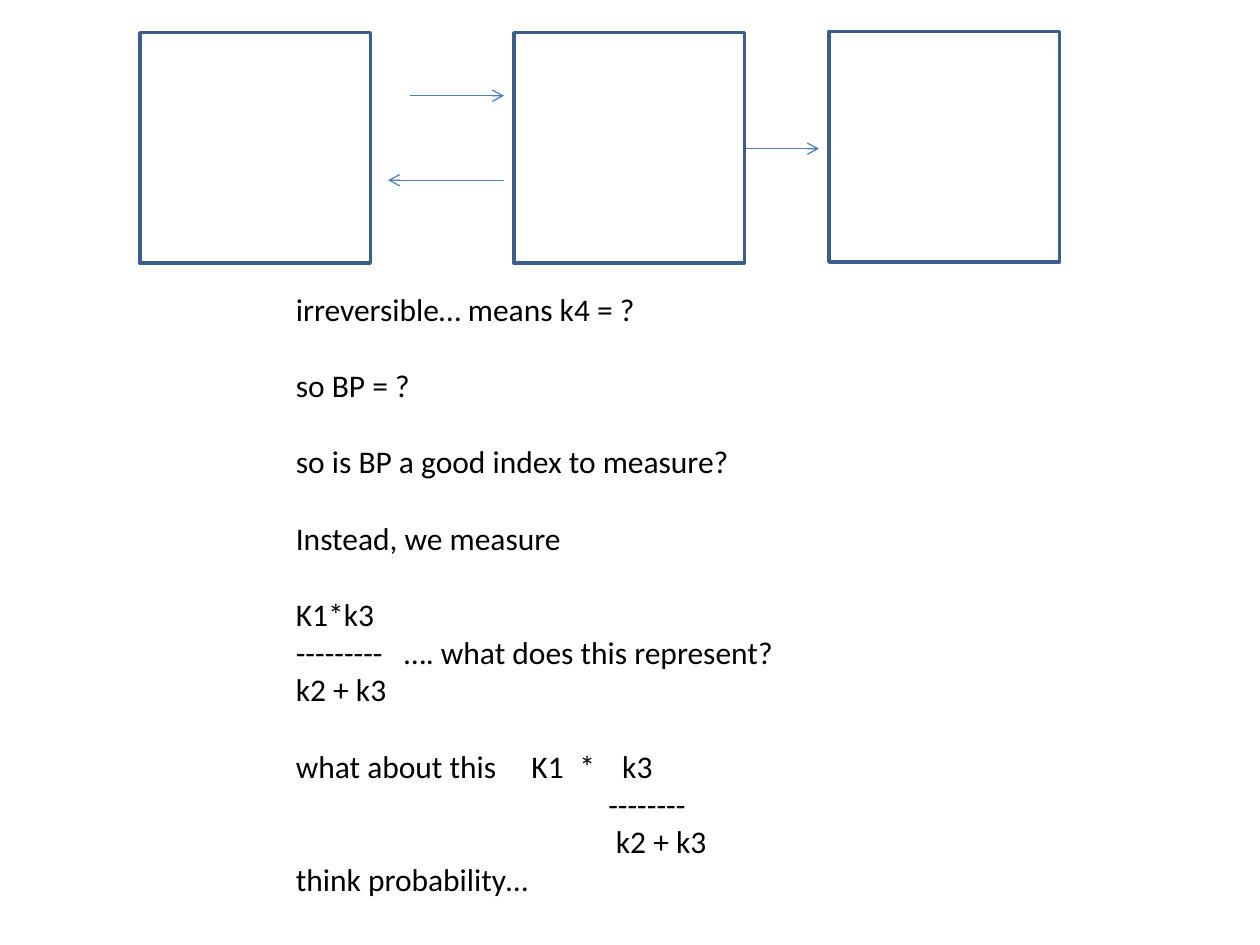
from lxml.etree import SubElement
from pptx import Presentation
from pptx.dml.color import RGBColor
from pptx.enum.shapes import MSO_CONNECTOR, MSO_SHAPE
from pptx.oxml.ns import qn
from pptx.util import Inches, Pt

BOX_BLUE = RGBColor(0x3A, 0x5F, 0x8C)
ARROW_BLUE = RGBColor(0x4B, 0x7E, 0xBC)
BLACK = RGBColor(0, 0, 0)

COMPARTMENT_SIZE = 1.83
COMPARTMENTS = [(1.11, 0.26), (4.08, 0.26), (6.58, 0.25)]
ARROWS = [(5.92, 6.5, 1.18), (3.25, 4, 0.76), (4, 3.08, 1.43)]

GAP = {"space_before": Pt(22)}
QUESTIONS = [
    ("irreversible… means k4 = ?", {}, 0, []),
    ("so BP = ?", GAP, 0, []),
    ("so is BP a good index to measure?", GAP, 0, []),
    ("Instead, we measure", GAP, 0, []),
    ("K1*k3", GAP, 0, []),
    ("---------\t…. what does this represent?", {}, 0, [0.86]),
    ("k2 + k3", {}, 0, []),
    ("what about this\tK1\t*\tk3", GAP, 0, [1.87, 2.25, 2.59]),
    ("--------", {}, 2.48, []),
    ("k2 + k3", {}, 2.54, []),
    ("think probability…", {}, 0, []),
]


def apply_format(target, values):
    for name, value in values.items():
        setattr(target, name, value)


class ModelSlide:
    font = {"name": "Calibri", "size": Pt(18)}

    def __init__(self, deck):
        self.page = deck.slides.add_slide(deck.slide_layouts[6])

    def compartment(self, left, top):
        size = Inches(COMPARTMENT_SIZE)
        box = self.page.shapes.add_shape(
            MSO_SHAPE.RECTANGLE, Inches(left), Inches(top), size, size)
        box.shadow.inherit = False
        box.fill.background()
        box.line.color.rgb = BOX_BLUE
        box.line.width = Pt(2)

    def arrow(self, start, end, height):
        arrow = self.page.shapes.add_connector(
            MSO_CONNECTOR.STRAIGHT,
            Inches(start), Inches(height), Inches(end), Inches(height))
        arrow.line.color.rgb = ARROW_BLUE
        arrow.line.width = Pt(0.75)
        SubElement(arrow.line._get_or_add_ln(), qn("a:tailEnd"), type="arrow")
        SubElement(arrow._element.spPr, qn("a:effectLst"))

    def text(self, left, top, width, height, lines):
        box = self.page.shapes.add_textbox(
            Inches(left), Inches(top), Inches(width), Inches(height))
        frame = box.text_frame
        frame.word_wrap = True
        for number, (wording, spacing, indent, stops) in enumerate(lines):
            para = frame.add_paragraph() if number else frame.paragraphs[0]
            apply_format(para, spacing)
            self.align(para, indent, stops)
            span = para.add_run()
            span.text = wording
            apply_format(span.font, self.font)
            span.font.color.rgb = BLACK

    def align(self, para, indent, stops):
        properties = para._p.get_or_add_pPr()
        properties.set("marL", str(Inches(indent)))
        if stops:
            tabs = SubElement(properties, qn("a:tabLst"))
            for stop in stops:
                SubElement(tabs, qn("a:tab"), pos=str(Inches(stop)), algn="l")


def main():
    deck = Presentation()
    apply_format(deck, {"slide_width": Inches(10), "slide_height": Inches(7.5)})
    slide = ModelSlide(deck)
    for place in COMPARTMENTS:
        slide.compartment(*place)
    for course in ARROWS:
        slide.arrow(*course)
    slide.text(2.25, 2.25, 6.5, 5.86, QUESTIONS)
    deck.save("out.pptx")


if __name__ == "__main__":
    main()
